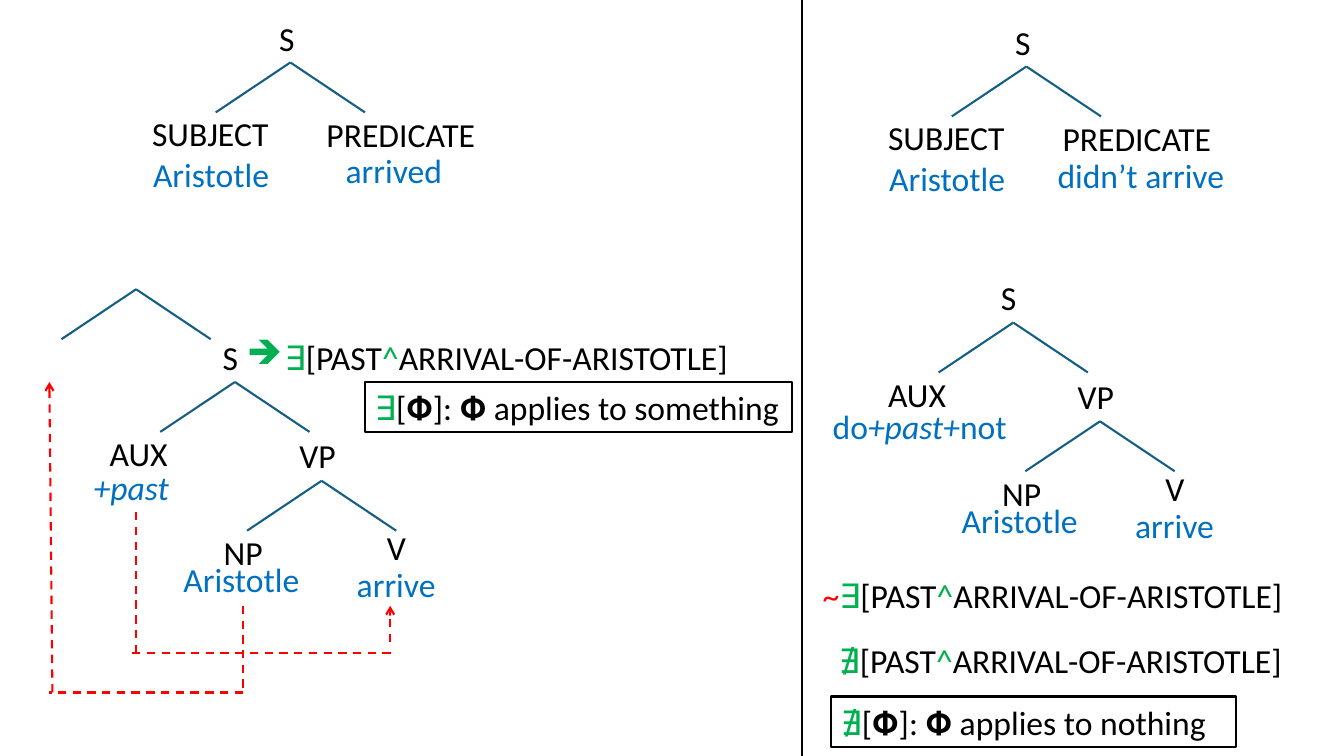
import dataclasses
import typing

import lxml.etree
import pptx
import pptx.dml.color
import pptx.enum.dml
import pptx.enum.shapes
import pptx.oxml.ns
import pptx.slide
import pptx.text.text
import pptx.util

COLUMNS, ROWS = 133.3, 75
CELL = pptx.util.Inches(0.1)


@dataclasses.dataclass(frozen=True)
class Theme:
    font: str = "Calibri"
    size: int = 24
    line_width: float = 1.5
    ink: str = "000000"
    word: str = "0070C0"
    logic: str = "00B050"
    branch: str = "156082"
    movement: str = "FF0000"


THEME = Theme()


class Span(typing.NamedTuple):
    text: str
    color: str = THEME.ink
    italic: bool = False


class Label(typing.NamedTuple):
    """Text whose box starts at a column and row, one text line high."""
    column: float
    row: float
    width: float
    spans: tuple[Span, ...]
    framed: bool = False
    bullet: str = ""


class Line(typing.NamedTuple):
    start: tuple[float, float]
    end: tuple[float, float]
    color: str = THEME.ink
    dashed: bool = False
    arrow: bool = False


def cells(count: float) -> pptx.util.Emu:
    return pptx.util.Emu(round(count * CELL))


def rgb(color: str) -> pptx.dml.color.RGBColor:
    return pptx.dml.color.RGBColor.from_string(color)


def add_element(parent: lxml.etree._Element, tag: str, **attributes: str) -> None:
    lxml.etree.SubElement(parent, pptx.oxml.ns.qn(tag), attributes)


def add_bullet(para: pptx.text.text._Paragraph, bullet: str) -> None:
    indent = cells(3.75)
    properties = para._p.get_or_add_pPr()
    properties.set("marL", str(indent))
    properties.set("indent", str(-indent))
    add_element(properties, "a:buChar", char=bullet)


def draw_label(page: pptx.slide.Slide, label: Label) -> None:
    box = page.shapes.add_textbox(
        cells(label.column), cells(label.row), cells(label.width), cells(5))
    box.text_frame.word_wrap = True
    if label.framed:
        box.line.color.rgb = rgb(THEME.ink)
        box.line.width = pptx.util.Pt(THEME.line_width)
    para = box.text_frame.paragraphs[0]
    if label.bullet:
        add_bullet(para, label.bullet)
    for span in label.spans:
        run = para.add_run()
        run.text = span.text
        run.font.name = THEME.font
        run.font.size = pptx.util.Pt(THEME.size)
        run.font.italic = span.italic
        run.font.color.rgb = rgb(span.color)


def draw_line(page: pptx.slide.Slide, line: Line) -> None:
    connector = page.shapes.add_connector(
        pptx.enum.shapes.MSO_CONNECTOR.STRAIGHT,
        *map(cells, line.start), *map(cells, line.end))
    connector.line.color.rgb = rgb(line.color)
    connector.line.width = pptx.util.Pt(THEME.line_width)
    if line.dashed:
        connector.line.dash_style = pptx.enum.dml.MSO_LINE.DASH
    if line.arrow:
        add_element(connector.line._get_or_add_ln(), "a:tailEnd", type="arrow")
    add_element(connector._element.spPr, "a:effectLst")


def draw_fork(page: pptx.slide.Slide, column: float, row: float) -> None:
    """Two branches falling from one apex."""
    for side in (-7.4, 7.4):
        draw_line(page, Line((column, row), (column + side, row + 4.95), THEME.branch))


def draw_labels(page: pptx.slide.Slide, column: float, row: float,
                labels: typing.Iterable[Label]) -> None:
    """Labels placed relative to a tree's apex."""
    for label in labels:
        draw_label(page, label._replace(column=column + label.column, row=row + label.row))


def node(column: float, row: float, width: float, text: str) -> Label:
    return Label(column, row, width, (Span(text),))


def word(column: float, row: float, width: float, text: str) -> Label:
    return Label(column, row, width, (Span(text, THEME.word),))


CLAUSE_LABELS = (
    node(-2.1, -4.9, 4.3, "S"),
    node(-14.7, 4.5, 17, "SUBJECT"),
    node(2.6, 4.6, 20, "PREDICATE"),
    word(-14.6, 8.6, 14.7, "Aristotle"),
)
EVENT_LABELS = (
    node(-2.2, -5, 4.3, "S"),
    node(-13.4, 4.6, 11, "AUX"),
    node(5.4, 4.8, 6.5, "VP"),
    node(-2.1, 14.4, 6.5, "NP"),
    node(14.1, 13.9, 5, "V"),
    word(-6.1, 17.1, 13.8, "Aristotle"),
    word(11.1, 17.6, 10.4, "arrive"),
)


def draw_clause_tree(page: pptx.slide.Slide, column: float, row: float,
                     predicate: Label) -> None:
    draw_fork(page, column, row)
    draw_labels(page, column, row, (*CLAUSE_LABELS, predicate))


def draw_event_tree(page: pptx.slide.Slide, column: float, row: float,
                    auxiliary: Label) -> None:
    draw_fork(page, column, row)
    draw_fork(page, column + 8.6, row + 9.8)
    draw_labels(page, column, row, (*EVENT_LABELS, auxiliary))


def formula(quantifier: str) -> tuple[Span, ...]:
    return (Span(quantifier, THEME.logic), Span("[PAST"), Span("^", THEME.logic),
            Span("ARRIVAL-OF-ARISTOTLE]"))


def definition(quantifier: str, amount: str) -> tuple[Span, ...]:
    return Span(quantifier, THEME.logic), Span(f"[𝚽]: 𝚽 applies to {amount}")


MOVEMENTS = (
    # start, end, arrow
    ((13.5, 50.8), (13.5, 64.7), False),
    ((13.1, 64.8), (39, 64.8), False),
    ((38.7, 63.7), (38.7, 60.1), True),
    ((24.1, 60.1), (24.1, 68.7), False),
    ((24.1, 68.7), (4.9, 68.7), False),
    ((5.2, 68.7), (4.9, 37.9), True),
)
MEANINGS = (
    Label(23.5, 32.9, 57.3, formula("∃"), bullet="➔"),
    Label(80.6, 56.5, 52, (Span("~", THEME.movement), *formula("∃"))),
    Label(82.2, 63, 51, formula("∄")),
    Label(36.2, 37.9, 42.4, definition("∃", "something"), framed=True),
    Label(82.4, 69.1, 40.2, definition("∄", "nothing"), framed=True),
)


def main() -> None:
    deck = pptx.Presentation()
    deck.slide_width, deck.slide_height = cells(COLUMNS), cells(ROWS)
    page = deck.slides.add_slide(deck.slide_layouts.get_by_name("Blank"))

    draw_line(page, Line((79.5, ROWS), (79.5, 0)))
    draw_clause_tree(page, 28.8, 6.2, word(4.5, 8.2, 19.6, "arrived"))
    draw_clause_tree(page, 101.8, 6.6, word(2.1, 8.3, 19.9, "didn’t arrive"))

    draw_fork(page, 13.5, 28.7)
    past = Span("+past", THEME.word, italic=True)
    draw_event_tree(page, 23.3, 37.9, Label(-15, 7.9, 10.4, (past,)))
    negated = (Span("do", THEME.word), past._replace(text="+past+"), Span("not", THEME.word))
    draw_event_tree(page, 100.5, 32, Label(-18.9, 7.8, 21.8, negated))

    for start, end, arrow in MOVEMENTS:
        draw_line(page, Line(start, end, THEME.movement, dashed=True, arrow=arrow))
    for meaning in MEANINGS:
        draw_label(page, meaning)
    deck.save("out.pptx")


if __name__ == "__main__":
    main()
